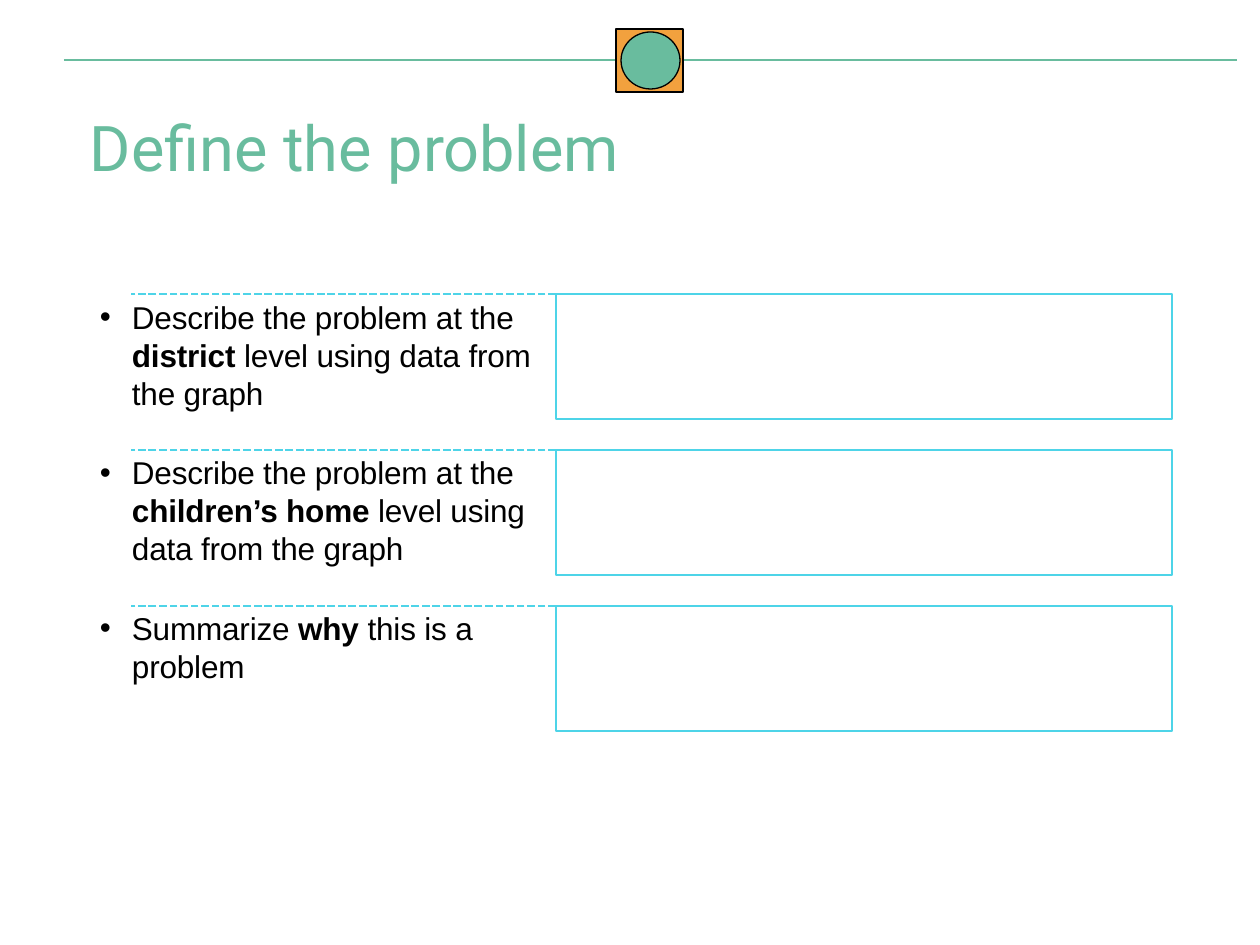
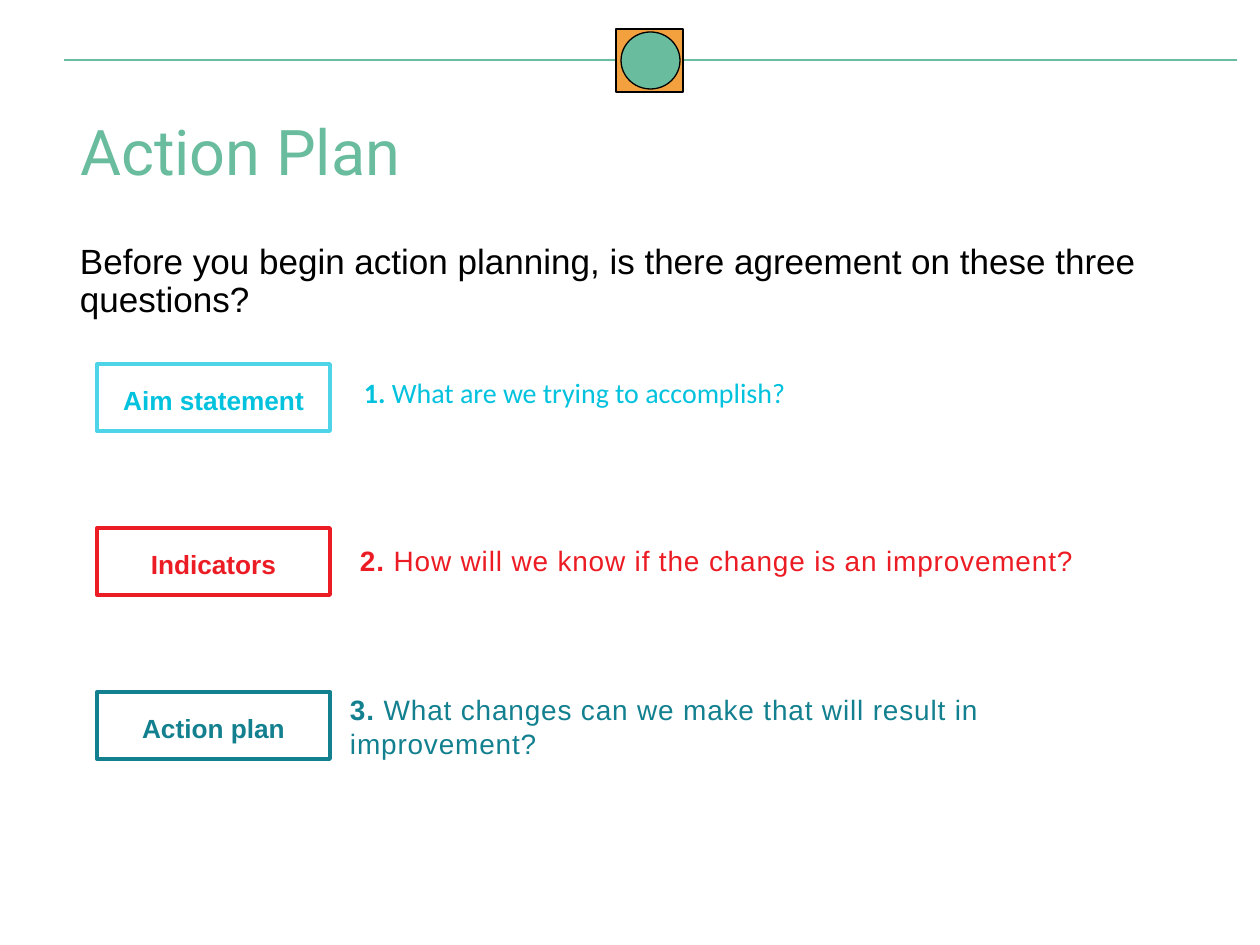
from lxml.etree import SubElement
from pptx import Presentation
from pptx.dml.color import RGBColor
from pptx.enum.dml import MSO_LINE
from pptx.enum.shapes import MSO_CONNECTOR, MSO_SHAPE
from pptx.enum.text import MSO_ANCHOR, MSO_AUTO_SIZE, PP_ALIGN
from pptx.oxml.ns import qn
from pptx.util import Emu, Pt

PX_PER_INCH = 126
GREEN, ORANGE, BLACK = "69BC9E", "F2A13E", "000000"
AQUA, CYAN, RED, TEAL = "4ED4E8", "02C2DE", "EC1C24", "13808F"


def px(length):
    """Turn a length in px into EMU."""
    return Emu(round(length * 914400 / PX_PER_INCH))


def rgb(color):
    """Turn a hex string into a colour."""
    return RGBColor.from_string(color)


def add_runs(paragraph, runs, size, color, font="Arial", tracking=0):
    """Add (text, bold) runs in one style to a paragraph."""
    for text, bold in runs:
        run = paragraph.add_run()
        run.text = text
        run.font.size = Pt(size)
        run.font.name = font
        run.font.bold = bold
        run.font.color.rgb = rgb(color)
        if tracking:
            run._r.get_or_add_rPr().set("spc", str(round(tracking * 100)))


def set_frame(frame, margins):
    """Give a text frame wrapping, top anchoring and (left, top, right, bottom) margins."""
    frame.word_wrap = True
    frame.auto_size = MSO_AUTO_SIZE.NONE
    frame.vertical_anchor = MSO_ANCHOR.TOP
    frame.margin_left, frame.margin_top, frame.margin_right, frame.margin_bottom = map(px, margins)


def add_text(slide, box, margins=(0, 0, 0, 0)):
    """Add a wrapping text box and return its frame."""
    frame = slide.shapes.add_textbox(*map(px, box)).text_frame
    set_frame(frame, margins)
    return frame


def add_box(slide, kind, box, line, weight, fill=None):
    """Add an outlined preset shape, hollow unless a fill is given."""
    shape = slide.shapes.add_shape(kind, *map(px, box))
    shape.shadow.inherit = False
    shape.line.color.rgb = rgb(line)
    shape.line.width = Pt(weight)
    if fill:
        shape.fill.solid()
        shape.fill.fore_color.rgb = rgb(fill)
    else:
        shape.fill.background()
    return shape


def add_rule(slide, start, end, y, color, weight, dash=None):
    """Add a horizontal line without a shadow."""
    rule = slide.shapes.add_connector(
        MSO_CONNECTOR.STRAIGHT, px(start), px(y), px(end), px(y))
    rule.line.color.rgb = rgb(color)
    rule.line.width = Pt(weight)
    if dash:
        rule.line.dash_style = dash
    SubElement(rule._element.spPr, qn("a:effectLst"))


def add_bullet(paragraph, indent):
    """Give a paragraph a hanging round bullet."""
    properties = paragraph._p.get_or_add_pPr()
    properties.set("marL", str(px(indent)))
    properties.set("indent", str(-px(indent)))
    SubElement(properties, qn("a:buFont"), typeface="Arial")
    SubElement(properties, qn("a:buChar"), char="•")


def add_titled_slide(deck, title, left, top):
    """Add a slide with the shared header and a title."""
    slide = deck.slides.add_slide(deck.slide_layouts[5])
    add_rule(slide, 64, 1237, 60, GREEN, 0.75)
    add_box(slide, MSO_SHAPE.RECTANGLE, (616, 29, 67, 63), BLACK, 1, ORANGE)
    add_box(slide, MSO_SHAPE.OVAL, (621, 32, 59, 57), BLACK, 0.75, GREEN)
    heading = slide.shapes.title
    heading.left, heading.top, heading.width, heading.height = map(px, (left, top, 1108, 116))
    set_frame(heading.text_frame, (13, 6, 13, 6))
    paragraph = heading.text_frame.paragraphs[0]
    paragraph.alignment = PP_ALIGN.LEFT
    paragraph.line_spacing = 0.9
    add_runs(paragraph, [(title, False)], 36, GREEN, "Roboto")
    return slide


def add_prompts(slide, prompts):
    """Add the bulleted prompts, each with a dashed lead to an answer box."""
    frame = add_text(slide, (87, 292, 476, 464), (13, 6, 13, 6))
    for index, runs in enumerate(prompts):
        paragraph = frame.add_paragraph() if index else frame.paragraphs[0]
        if index:
            paragraph.space_before = Pt(6)
        paragraph.space_after = Pt(18)
        add_bullet(paragraph, 32)
        add_runs(paragraph, runs, 18, BLACK, tracking=-0.1)
        top = 294 + 156 * index
        add_box(slide, MSO_SHAPE.RECTANGLE, (556, top, 616, 125), AQUA, 1.5)
        add_rule(slide, 556, 131, top, AQUA, 1.5, MSO_LINE.SQUARE_DOT)


def add_label(slide, text, top, line, color):
    """Add an outlined label box."""
    label = add_box(slide, MSO_SHAPE.RECTANGLE, (97, top, 233, 67), line, 2.25)
    set_frame(label.text_frame, (6, 4, 6, 0))
    label.text_frame.vertical_anchor = MSO_ANCHOR.MIDDLE
    paragraph = label.text_frame.paragraphs[0]
    paragraph.alignment = PP_ALIGN.CENTER
    add_runs(paragraph, [(text, True)], 15, color)


def add_question(slide, number, text, left, top, color, font="Arial", tracking=0.5, spacing=1.0):
    """Add a numbered question."""
    frame = add_text(slide, (left, top, 1170 - left, 72))
    paragraph = frame.paragraphs[0]
    paragraph.line_spacing = spacing
    add_runs(paragraph, [(f"{number}. ", True), (text, False)], 16, color, font, tracking)


def build_problem(deck):
    """Build the problem definition slide."""
    slide = add_titled_slide(deck, "Define the problem", 77, 111)
    add_prompts(slide, [
        [("Describe the problem at the ", False), ("district ", True),
         ("level using data from the graph", False)],
        [("Describe the problem at the ", False), ("children’s home ", True),
         ("level using data from the graph", False)],
        [("Summarize ", False), ("why", True), (" this is a problem", False)],
    ])


def build_plan(deck):
    """Build the action plan slide."""
    slide = add_titled_slide(deck, "Action Plan", 67, 115)
    intro = add_text(slide, (67, 238, 1094, 58), (13, 6, 13, 6)).paragraphs[0]
    intro.line_spacing = 0.9
    add_runs(intro, [("Before you begin action planning, is there agreement "
                      "on these three questions?", False)], 20, BLACK)
    labels = [("Aim statement", AQUA, CYAN), ("Indicators", RED, RED), ("Action plan", TEAL, TEAL)]
    for index, (text, line, color) in enumerate(labels):
        add_label(slide, text, 364 + 164 * index, line, color)
    add_question(slide, 1, "What are we trying to accomplish?", 364, 379, CYAN, "Calibri", 0, 0.9)
    add_question(slide, 2, "How will we know if the change is an improvement?", 360, 544, RED)
    add_question(slide, 3, "What changes can we make that will result in improvement?",
                 350, 693, TEAL)


def main():
    """Build and save the deck."""
    deck = Presentation()
    deck.slide_width, deck.slide_height = px(1260), px(945)
    build_problem(deck)
    build_plan(deck)
    deck.save("out.pptx")


if __name__ == "__main__":
    main()
